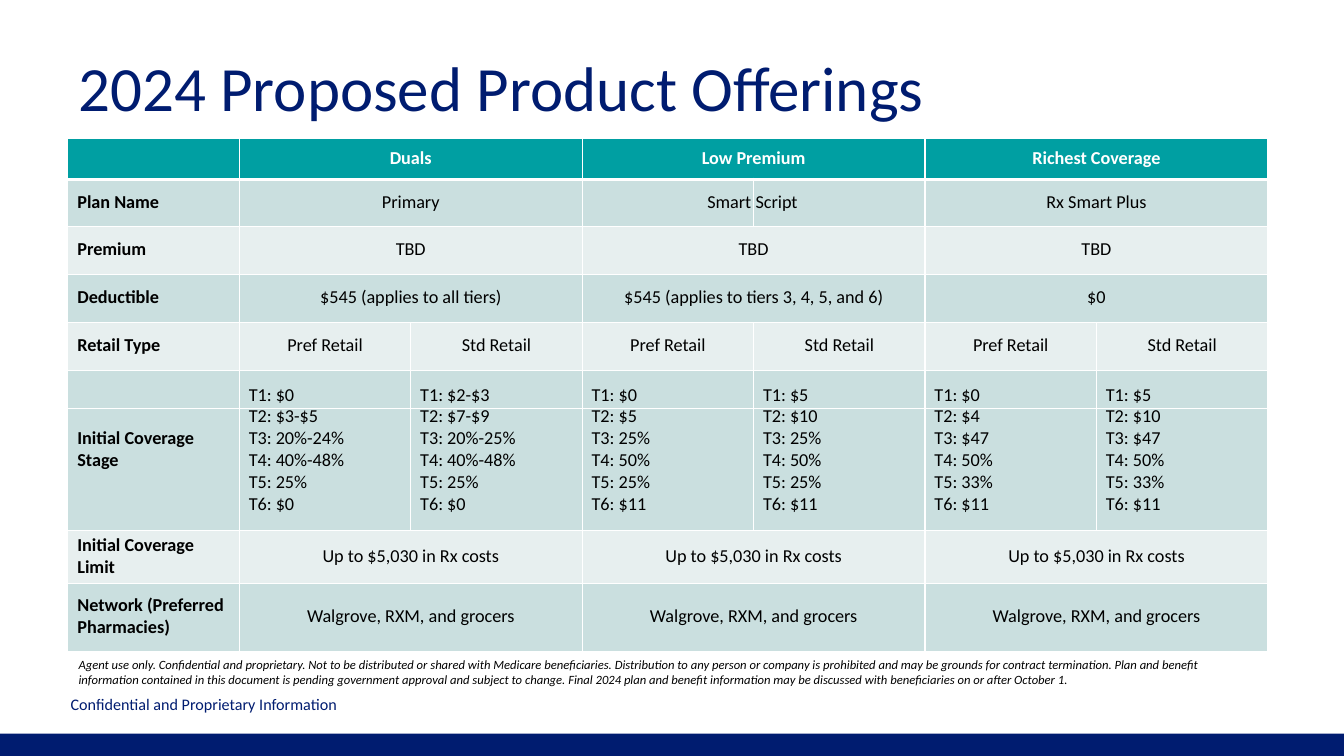
import lxml.etree
import pptx
import pptx.dml.color
import pptx.enum.shapes
import pptx.enum.text
import pptx.oxml.ns
import pptx.util

Cm = pptx.util.Cm
Pt = pptx.util.Pt
ALIGN = pptx.enum.text.PP_ALIGN

TITLE = "2024 Proposed Product Offerings"
FOOTER = "Confidential and Proprietary Information"
DISCLAIMER = (
    "Agent use only. Confidential and proprietary. Not to be distributed or shared with Medicare "
    "beneficiaries. Distribution to any person or company is prohibited and may be grounds for "
    "contract termination. Plan and benefit information contained in this document is pending "
    "government approval and subject to change. Final 2024 plan and benefit information may be "
    "discussed with beneficiaries on or after October 1."
)
SEGMENTS = ["Duals", "Low Premium", "Richest Coverage"]
SPLIT_PLAN = ["Smart", "Script"]
PLANS = ["Primary", SPLIT_PLAN, "Rx Smart Plus"]
DEDUCTIBLES = ["$545 (applies to all tiers)", "$545 (applies to tiers 3, 4, 5, and 6)", "$0"]
LIMIT = "Up to $5,030 in Rx costs"
NETWORK = "Walgrove, RXM, and grocers"
RETAIL_TYPES = ["Pref Retail", "Std Retail"]
TIERS = [
    ["$0", "$2-$3", "$0", "$5", "$0", "$5"],
    ["$3-$5", "$7-$9", "$5", "$10", "$4", "$10"],
    ["20%-24%", "20%-25%", "25%", "25%", "$47", "$47"],
    ["40%-48%", "40%-48%", "50%", "50%", "50%", "50%"],
    ["25%", "25%", "25%", "25%", "33%", "33%"],
    ["$0", "$0", "$11", "$11", "$11", "$11"],
]
TIER_LABELS = ["", "", "Initial Coverage", "Stage", "", ""]
TIER_HEIGHTS = [0.96, 0.55, 0.55, 0.55, 0.55, 0.86]

THEME = {
    "font": "Calibri", "navy": "001C70", "teal": "009FA2", "dark": "CADFDF", "light": "E7EFEF",
    "white": "FFFFFF", "black": "000000",
    "title": 45, "body": 13, "footer": 11.5, "note": 9, "tier_line": 13.6, "label_line": 15.6,
    "rule": 1, "head_rule": 3,
}

# label, values, height, fill, top margin of label, top margin of values
ROWS = [
    ("", SEGMENTS, 1.02, "teal", 0.2, 0.2),
    ("Plan Name", PLANS, 1.19, "dark", 0.3, 0.3),
    ("Premium", ["TBD"] * 3, 1.21, "light", 0.3, 0.3),
    ("Deductible", DEDUCTIBLES, 1.21, "dark", 0.3, 0.3),
    ("Retail Type", [RETAIL_TYPES] * 3, 1.21, "light", 0.3, 0.3),
]
for n, (label, prices, height) in enumerate(zip(TIER_LABELS, TIERS, TIER_HEIGHTS), 1):
    texts = [f"T{n}: {price}" for price in prices]
    pairs = [texts[i:i + 2] for i in range(0, 6, 2)]
    top = 0.33 if n == 1 else 0
    ROWS.append((label, pairs, height, "dark", top, top))
ROWS += [
    ("Initial Coverage\nLimit", [LIMIT] * 3, 1.34, "light", 0.1, 0.38),
    ("Network (Preferred\nPharmacies)", [NETWORK] * 3, 1.71, "dark", 0.28, 0.54),
]
FIRST_TIER = 5
LAST_TIER = FIRST_TIER + len(TIERS) - 1
COLUMNS, COLUMN_WIDTH = 7, 4.32


def rgb(name):
    return pptx.dml.color.RGBColor.from_string(THEME[name])


def style(p, size, color, bold=False, italic=False, align=ALIGN.LEFT, line=None):
    p.alignment = align
    if line:
        p.line_spacing = Pt(line)
    for r in p.runs:
        r.font.name, r.font.size = THEME["font"], Pt(size)
        r.font.bold, r.font.italic = bold, italic
        r.font.color.rgb = rgb(color)
    if not p.runs:
        lxml.etree.SubElement(p._p, pptx.oxml.ns.qn("a:endParaRPr"), sz=str(size * 100))


def add_text(s, text, box, size, color, **look):
    tf = s.shapes.add_textbox(*map(Cm, box)).text_frame
    tf.word_wrap = True
    tf.margin_left = tf.margin_top = tf.margin_right = tf.margin_bottom = 0
    tf.text = text
    style(tf.paragraphs[0], size, color, **look)


def add_border(cell, side, width):
    qn = pptx.oxml.ns.qn
    ln = lxml.etree.SubElement(cell._tc.get_or_add_tcPr(), qn(f"a:ln{side}"), w=str(Pt(width)))
    if width:
        fill = lxml.etree.SubElement(ln, qn("a:solidFill"))
        lxml.etree.SubElement(fill, qn("a:srgbClr"), val=THEME["white"])
    else:
        lxml.etree.SubElement(ln, qn("a:noFill"))


def edge_width(edge):
    if edge == 1:
        return THEME["head_rule"]
    inside_tiers = FIRST_TIER + 1 < edge <= LAST_TIER
    return 0 if inside_tiers else THEME["rule"]


def fill_cell(cell, text, top, left=0, right=0, **look):
    cell.margin_top, cell.margin_left, cell.margin_right = Cm(top), Cm(left), Cm(right)
    cell.text = text
    for p in cell.text_frame.paragraphs:
        style(p, THEME["body"], **look)


def add_offerings(s):
    height = sum(row[2] for row in ROWS)
    tbl = s.shapes.add_table(len(ROWS), COLUMNS, Cm(1.71), Cm(3.5),
                             Cm(COLUMNS * COLUMN_WIDTH), Cm(height)).table
    tbl.first_row = tbl.horz_banding = False
    for column in tbl.columns:
        column.width = Cm(COLUMN_WIDTH)
    for i, (label, values, height, fill, label_top, top) in enumerate(ROWS):
        tbl.rows[i].height = Cm(height)
        in_tiers = FIRST_TIER <= i <= LAST_TIER
        line = THEME["tier_line"] if FIRST_TIER < i <= LAST_TIER else None
        color = "black" if i else "white"
        for j in range(COLUMNS):
            cell = tbl.cell(i, j)
            for side, width in (("L", THEME["rule"]), ("R", THEME["rule"]),
                                ("T", edge_width(i)), ("B", edge_width(i + 1))):
                add_border(cell, side, width)
            cell.fill.solid()
            cell.fill.fore_color.rgb = rgb(fill)
            cell.margin_bottom = 0
            fill_cell(cell, "", 0, color=color, line=line)
        label_line = THEME["label_line"] if "\n" in label else line
        if label:
            fill_cell(tbl.cell(i, 0), label, label_top, left=0.24, color=color, bold=True,
                      line=label_line)
        for k, value in enumerate(values):
            first, second = tbl.cell(i, 2 * k + 1), tbl.cell(i, 2 * k + 2)
            if isinstance(value, str):
                first.merge(second)
                fill_cell(first, value, top, color=color, bold=i == 0, align=ALIGN.CENTER)
            elif value is SPLIT_PLAN:
                fill_cell(first, value[0], top, right=0.06, color=color, align=ALIGN.RIGHT)
                fill_cell(second, value[1], top, left=0.05, color=color)
            else:
                for cell, text in zip((first, second), value):
                    fill_cell(cell, text, top, left=0.24 if in_tiers else 0, color=color,
                              align=ALIGN.LEFT if in_tiers else ALIGN.CENTER, line=line)


def main():
    prs = pptx.Presentation()
    prs.slide_width, prs.slide_height = Cm(33.87), Cm(19.05)
    s = prs.slides.add_slide(prs.slide_layouts[6])
    bar = s.shapes.add_shape(pptx.enum.shapes.MSO_SHAPE.RECTANGLE,
                             0, Cm(18.49), prs.slide_width, Cm(0.56))
    bar.shadow.inherit = False
    bar.fill.solid()
    bar.fill.fore_color.rgb = rgb("navy")
    bar.line.fill.background()
    add_text(s, TITLE, (1.98, 1.22, 30, 1.98), THEME["title"], "navy")
    add_text(s, FOOTER, (1.78, 17.55, 9.3, 0.51), THEME["footer"], "navy", line=12.2)
    add_offerings(s)
    add_text(s, DISCLAIMER, (1.98, 16.56, 28.32, 0.84), THEME["note"], "black", italic=True)
    prs.save("out.pptx")


if __name__ == "__main__":
    main()
